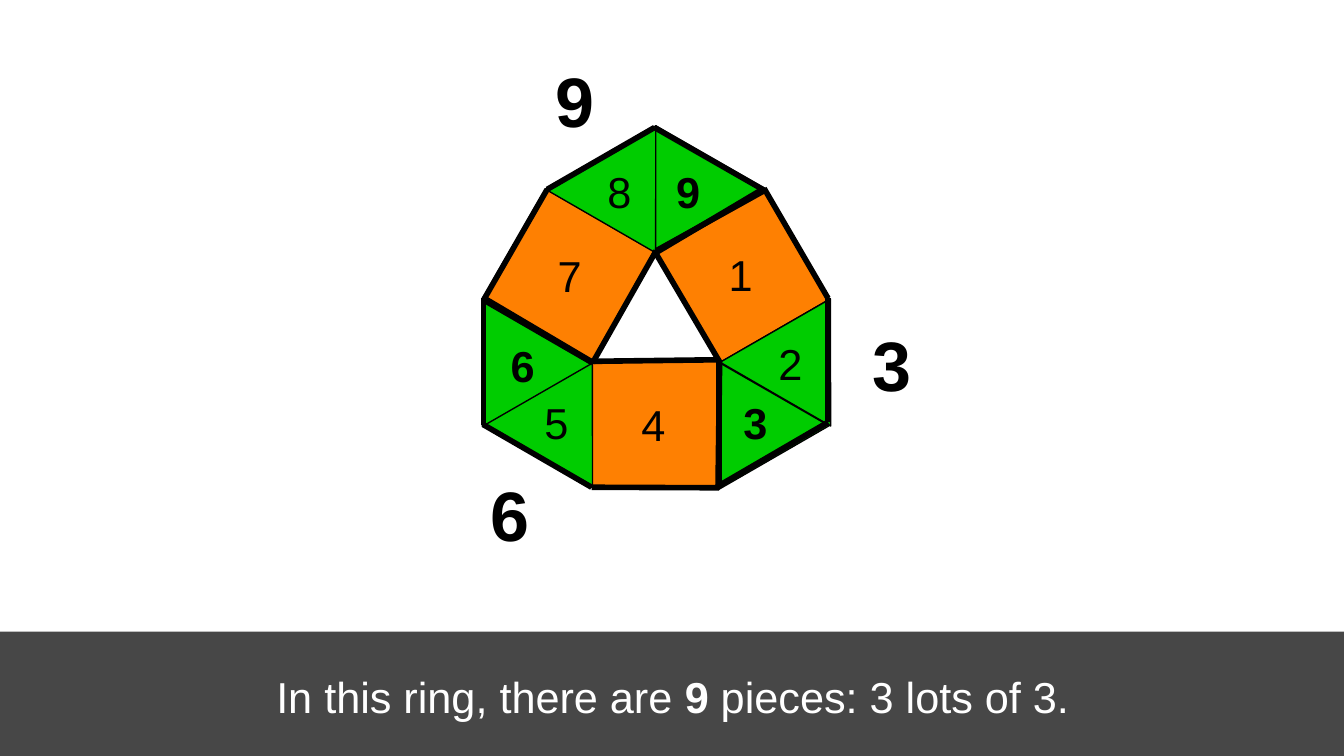
from itertools import pairwise
from typing import NamedTuple

from lxml import etree
from pptx import Presentation
from pptx import util as u
from pptx.dml.color import RGBColor
from pptx.enum import shapes, text
from pptx.oxml import ns

BLACK = RGBColor(0x00, 0x00, 0x00)
WHITE = RGBColor(0xFF, 0xFF, 0xFF)
ORANGE = RGBColor(0xFE, 0x80, 0x02)
GREEN = RGBColor(0x00, 0xCC, 0x00)

SQUARE = shapes.MSO_SHAPE.RECTANGLE
TRIANGLE = shapes.MSO_SHAPE.ISOSCELES_TRIANGLE
SIDE = 2.41
HEIGHTS = {SQUARE: SIDE, TRIANGLE: 2.08}
LABEL_WIDTH = 1.8
FONT = "Arial"
TEXT_SIZE = 23.2
TOTAL_SIZE = 37.5


class Tile(NamedTuple):
    kind: shapes.MSO_SHAPE
    left: float
    top: float
    turn: int
    color: RGBColor


class Label(NamedTuple):
    words: str
    left: float
    top: float
    bold: bool = False


class Point(NamedTuple):
    x: float
    y: float


TILES = [
    Tile(TRIANGLE, 11.2, 4.78, 0, WHITE),
    Tile(SQUARE, 12.83, 4.01, 330, ORANGE),
    Tile(SQUARE, 11.2, 6.83, 0, ORANGE),
    Tile(SQUARE, 9.55, 4.01, 30, ORANGE),
    Tile(TRIANGLE, 9.47, 6.68, 30, GREEN),
    Tile(TRIANGLE, 8.43, 6.12, 210, GREEN),
    Tile(TRIANGLE, 10.67, 2.24, 30, GREEN),
    Tile(TRIANGLE, 11.71, 2.24, 330, GREEN),
    Tile(TRIANGLE, 13.97, 5.51, 30, GREEN),
    Tile(TRIANGLE, 12.9, 6.71, 330, GREEN),
]

COUNTS = [
    Label("5", 10.11, 7.39),
    Label("2", 14.53, 6.27),
    Label("3", 13.87, 7.39, True),
    Label("4", 11.94, 7.42),
    Label("1", 13.59, 4.6),
    Label("6", 9.47, 6.32, True),
    Label("7", 10.36, 4.62),
    Label("8", 11.3, 3.02),
    Label("9", 12.6, 3.02, True),
]

LOT_OUTLINES = [
    [Point(11.2, 6.86), Point(9.14, 5.67), Point(10.34, 3.58),
     Point(12.37, 2.41), Point(14.45, 3.6), Point(12.4, 4.74)],
    [Point(12.39, 4.78), Point(14.44, 3.56), Point(15.65, 5.64),
     Point(15.65, 7.98), Point(13.57, 9.19), Point(13.6, 6.84)],
    [Point(13.59, 6.8), Point(13.59, 9.22), Point(11.18, 9.21),
     Point(9.14, 8.03), Point(9.14, 5.63), Point(11.17, 6.83)],
]

TOTALS = [
    Label("3", 16.31, 5.97, True),
    Label("6", 9.09, 8.81, True),
    Label("9", 10.31, 0.99, True),
]


def add_band(page) -> None:
    band = page.shapes.add_shape(SQUARE, 0, u.Cm(11.94), u.Cm(25.4), u.Cm(2.35))
    band.shadow.inherit = False
    band.fill.solid()
    band.fill.fore_color.rgb = BLACK
    band.line.fill.background()
    color = band.fill._xPr.find(".//" + ns.qn("a:srgbClr"))
    etree.SubElement(color, ns.qn("a:alpha"), val="72000")


def add_caption(page) -> None:
    box = page.shapes.add_textbox(u.Cm(4.14), u.Cm(11.96), u.Cm(17.15), u.Cm(2.39))
    frame = box.text_frame
    frame.word_wrap = True
    frame.vertical_anchor = text.MSO_ANCHOR.MIDDLE
    para = frame.paragraphs[0]
    para.alignment = text.PP_ALIGN.CENTER
    para.font.name = FONT
    para.font.size = u.Pt(TEXT_SIZE)
    para.font.color.rgb = WHITE
    for words, bold in [
        ("In this ring, there are ", False),
        ("9", True),
        (" pieces: 3 lots of 3.", False),
    ]:
        span = para.add_run()
        span.text = words
        span.font.bold = bold


def add_tile(page, tile: Tile) -> None:
    piece = page.shapes.add_shape(
        tile.kind, u.Cm(tile.left), u.Cm(tile.top), u.Cm(SIDE), u.Cm(HEIGHTS[tile.kind])
    )
    piece.shadow.inherit = False
    piece.rotation = tile.turn
    piece.fill.solid()
    piece.fill.fore_color.rgb = tile.color
    piece.line.color.rgb = BLACK
    piece.line.width = u.Pt(0.75)


def add_label(page, label: Label, size: float, height: float) -> None:
    box = page.shapes.add_textbox(
        u.Cm(label.left), u.Cm(label.top), u.Cm(LABEL_WIDTH), u.Cm(height)
    )
    frame = box.text_frame
    frame.word_wrap = True
    frame.margin_left = frame.margin_right = u.Cm(0.18)
    frame.margin_top = frame.margin_bottom = u.Cm(0.1)
    para = frame.paragraphs[0]
    para.text = label.words
    para.font.name = FONT
    para.font.size = u.Pt(size)
    para.font.bold = label.bold
    para.font.color.rgb = BLACK


def add_outline(page, corners: list[Point]) -> None:
    for start, end in pairwise([*corners, corners[0]]):
        edge = page.shapes.add_connector(
            shapes.MSO_CONNECTOR.STRAIGHT,
            u.Cm(start.x), u.Cm(start.y), u.Cm(end.x), u.Cm(end.y),
        )
        edge.line.color.rgb = BLACK
        edge.line.width = u.Pt(3)
        etree.SubElement(edge._element.spPr, ns.qn("a:effectLst"))


def main() -> None:
    deck = Presentation()
    deck.slide_width = u.Cm(25.4)
    deck.slide_height = u.Cm(14.29)
    page = deck.slides.add_slide(deck.slide_layouts[6])

    add_band(page)
    add_caption(page)
    for tile in TILES:
        add_tile(page, tile)
    for count in COUNTS:
        add_label(page, count, TEXT_SIZE, 1.19)
    for corners in LOT_OUTLINES:
        add_outline(page, corners)
    for total in TOTALS:
        add_label(page, total, TOTAL_SIZE, LABEL_WIDTH)

    deck.save("out.pptx")


if __name__ == "__main__":
    main()
